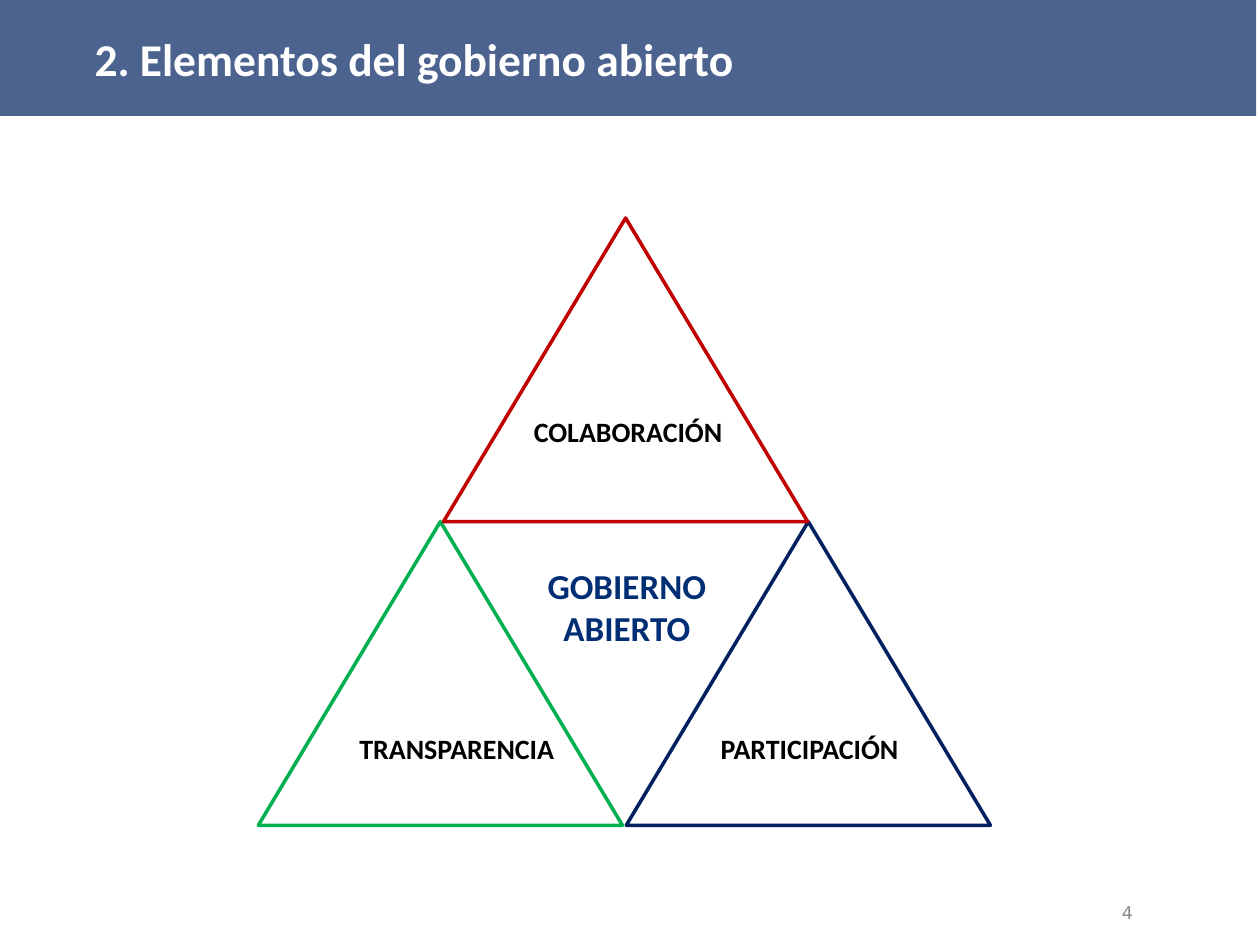
from lxml import etree
from pptx import Presentation
from pptx.dml.color import RGBColor
from pptx.enum.shapes import MSO_SHAPE
from pptx.enum.text import MSO_ANCHOR, MSO_AUTO_SIZE, PP_ALIGN
from pptx.oxml.ns import qn
from pptx.util import Inches, Pt

WHITE = RGBColor(0xFF, 0xFF, 0xFF)
BLACK = RGBColor(0x00, 0x00, 0x00)
GREEN = RGBColor(0x00, 0xB0, 0x50)
NAVY = RGBColor(0x00, 0x20, 0x60)
RED = RGBColor(0xC0, 0x00, 0x00)
BLUE = RGBColor(0x00, 0x2E, 0x74)
GRAY = RGBColor(0x89, 0x89, 0x89)

TRIANGLE_WIDTH = 2.89
TRIANGLE_HEIGHT = 2.41
APEX_TOP = 1.73
BASE_TOP = APEX_TOP + TRIANGLE_HEIGHT


def add_run(paragraph, text, size, color, bold=True, font="Calibri"):
    run = paragraph.add_run()
    run.text = text
    run.font.name = font
    run.font.size = Pt(size)
    run.font.bold = bold
    run.font.color.rgb = color


def add_label(shapes, lines, left, top, width, height, size, color):
    label = shapes.add_textbox(Inches(left), Inches(top), Inches(width), Inches(height))
    frame = label.text_frame
    frame.word_wrap = True
    for index, line in enumerate(lines):
        paragraph = frame.add_paragraph() if index else frame.paragraphs[0]
        paragraph.alignment = PP_ALIGN.CENTER
        add_run(paragraph, line, size, color)


presentation = Presentation()
presentation.slide_width = Inches(10)
presentation.slide_height = Inches(7.5)
slide = presentation.slides.add_slide(presentation.slide_layouts[5])

title = slide.shapes.title
title.left, title.top = Inches(-0.03), Inches(0)
title.width, title.height = Inches(10), Inches(0.92)
title.fill.solid()
title.fill.fore_color.rgb = NAVY
fill_color = title.fill._xPr.find(qn("a:solidFill")).find(qn("a:srgbClr"))
etree.SubElement(fill_color, qn("a:alpha"), val="70000")
title_frame = title.text_frame
title_frame.auto_size = MSO_AUTO_SIZE.NONE
title_frame.vertical_anchor = MSO_ANCHOR.MIDDLE
title_frame.margin_left = Inches(0.78)
title_paragraph = title_frame.paragraphs[0]
title_paragraph.alignment = PP_ALIGN.LEFT
add_run(title_paragraph, "2. Elementos del gobierno abierto", 26, WHITE)

pyramid = slide.shapes.add_group_shape()
triangles = [
    (2.05, BASE_TOP, GREEN),
    (4.97, BASE_TOP, NAVY),
    (3.52, APEX_TOP, RED),
]
for left, top, color in triangles:
    triangle = pyramid.shapes.add_shape(
        MSO_SHAPE.ISOSCELES_TRIANGLE,
        Inches(left), Inches(top), Inches(TRIANGLE_WIDTH), Inches(TRIANGLE_HEIGHT),
    )
    triangle.shadow.inherit = False
    triangle.fill.solid()
    triangle.fill.fore_color.rgb = WHITE
    triangle.line.color.rgb = color
    triangle.line.width = Pt(2)

pillars = [
    ("TRANSPARENCIA", 2.6, 5.76, 2.05),
    ("PARTICIPACIÓN", 5.52, 5.76, 1.81),
    ("COLABORACIÓN", 3.96, 3.24, 2.05),
]
for name, left, top, width in pillars:
    add_label(pyramid.shapes, [name], left, top, width, 0.37, 16, BLACK)
add_label(pyramid.shapes, ["GOBIERNO", "ABIERTO"], 3.95, 4.43, 2.05, 0.77, 20, BLUE)

page_number = slide.shapes.add_textbox(Inches(6.76), Inches(7.14), Inches(2.33), Inches(0.21))
page_frame = page_number.text_frame
page_frame.word_wrap = True
page_frame.vertical_anchor = MSO_ANCHOR.MIDDLE
page_paragraph = page_frame.paragraphs[0]
page_paragraph.alignment = PP_ALIGN.RIGHT
add_run(page_paragraph, "4", 10, GRAY, bold=False, font="DejaVu Sans")

presentation.save("out.pptx")
